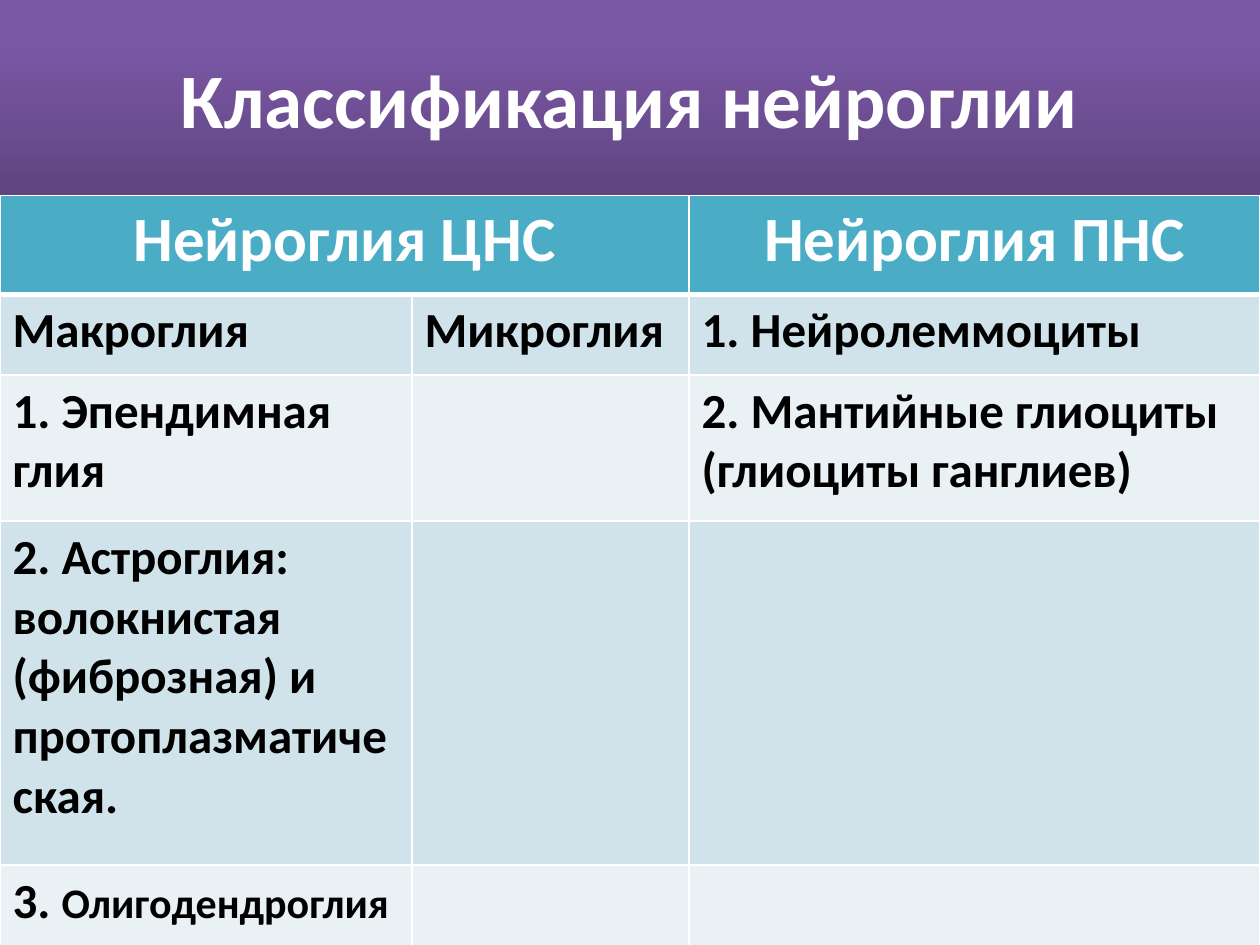
from dataclasses import dataclass

from lxml.etree import SubElement
from pptx import Presentation
from pptx.dml.color import RGBColor
from pptx.enum.text import MSO_ANCHOR, PP_ALIGN
from pptx.oxml import parse_xml
from pptx.oxml.ns import nsdecls, qn
from pptx.util import Pt


@dataclass(frozen=True)
class Theme:
    font: str = "Calibri"
    white: str = "FFFFFF"
    black: str = "000000"
    header: str = "4BACC6"
    bands: tuple = ("D0E3EA", "E9F1F5")
    gradient: tuple = ((0, "5F4480"), (80, "7B58A6"), (100, "7C57A8"))
    title_size: int = 44
    header_size: int = 36
    body_size: int = 28
    small_size: int = 24
    thin: int = 1
    thick: int = 3


@dataclass(frozen=True)
class Span:
    text: str
    size: int
    color: str


THEME = Theme()
PAGE_WIDTH, PAGE_HEIGHT = 720, 540
TITLE_HEIGHT = 111.6
COLUMN_WIDTHS = (235.4, 158.4, 326.2)
ROW_HEIGHTS = (56.8, 46, 83.5, 196.6, 46)


def heading(text: str) -> list[Span]:
    return [Span(text, THEME.header_size, THEME.white)]


def body(text: str, size: int = THEME.body_size) -> list[Span]:
    return [Span(text, size, THEME.black)]


ROWS = (
    (heading("Нейроглия ЦНС"), [], heading("Нейроглия ПНС")),
    (body("Макроглия"), body("Микроглия"), body("1. Нейролеммоциты")),
    (body("1. Эпендимная глия"), [], body("2. Мантийные глиоциты (глиоциты ганглиев)")),
    (body("2. Астроглия: волокнистая (фиброзная) и протоплазматическая."), [], []),
    (body("3. ") + body("Олигодендроглия", THEME.small_size), [], []),
)


def write_spans(para, spans: list[Span]) -> None:
    for span in spans:
        run = para.add_run()
        run.text = span.text
        run.font.name = THEME.font
        run.font.size = Pt(span.size)
        run.font.bold = True
        run.font.color.rgb = RGBColor.from_string(span.color)


def draw_title(page, text: str) -> None:
    title = page.shapes.title
    title.left, title.top = Pt(0), Pt(0)
    title.width, title.height = Pt(PAGE_WIDTH), Pt(TITLE_HEIGHT)
    title.text_frame.vertical_anchor = MSO_ANCHOR.MIDDLE
    para = title.text_frame.paragraphs[0]
    para.alignment = PP_ALIGN.CENTER
    write_spans(para, [Span(text, THEME.title_size, THEME.white)])
    stops = "".join(
        f'<a:gs pos="{position * 1000}"><a:srgbClr val="{color}"/></a:gs>'
        for position, color in THEME.gradient
    )
    properties = title.element.spPr
    properties.append(parse_xml(
        f'<a:gradFill {nsdecls("a")} rotWithShape="1"><a:gsLst>{stops}</a:gsLst>'
        '<a:lin ang="16200000" scaled="0"/></a:gradFill>'
    ))
    properties.append(parse_xml(
        f'<a:effectLst {nsdecls("a")}><a:outerShdw blurRad="{Pt(3.1)}" '
        f'dist="{Pt(1.8)}" dir="5400000" rotWithShape="0">'
        f'<a:srgbClr val="{THEME.black}"><a:alpha val="35000"/></a:srgbClr>'
        '</a:outerShdw></a:effectLst>'
    ))


def draw_borders(cell, top: int, bottom: int) -> None:
    properties = cell._tc.get_or_add_tcPr()
    widths = {"lnL": THEME.thin, "lnR": THEME.thin, "lnT": top, "lnB": bottom}
    for index, (side, width) in enumerate(widths.items()):
        line = SubElement(properties, qn(f"a:{side}"), w=str(Pt(width)))
        fill = SubElement(line, qn("a:solidFill"))
        SubElement(fill, qn("a:srgbClr"), val=THEME.white)
        properties.insert(index, line)


def draw_cell(cell, spans: list[Span], row: int) -> None:
    color = THEME.header if row == 0 else THEME.bands[(row - 1) % 2]
    cell.fill.solid()
    cell.fill.fore_color.rgb = RGBColor.from_string(color)
    para = cell.text_frame.paragraphs[0]
    para.alignment = PP_ALIGN.CENTER if row == 0 else PP_ALIGN.LEFT
    write_spans(para, spans)
    draw_borders(
        cell,
        top=THEME.thick if row == 1 else THEME.thin,
        bottom=THEME.thick if row == 0 else THEME.thin,
    )


def draw_table(page) -> None:
    table = page.shapes.add_table(
        len(ROWS), len(COLUMN_WIDTHS), Pt(0), Pt(TITLE_HEIGHT),
        Pt(PAGE_WIDTH), Pt(sum(ROW_HEIGHTS)),
    ).table
    for column, width in zip(table.columns, COLUMN_WIDTHS):
        column.width = Pt(width)
    for row, height in zip(table.rows, ROW_HEIGHTS):
        row.height = Pt(height)
    table.cell(0, 0).merge(table.cell(0, 1))
    for row, contents in enumerate(ROWS):
        for column, spans in enumerate(contents):
            draw_cell(table.cell(row, column), spans, row)


def main() -> None:
    deck = Presentation()
    deck.slide_width, deck.slide_height = Pt(PAGE_WIDTH), Pt(PAGE_HEIGHT)
    page = deck.slides.add_slide(deck.slide_layouts.get_by_name("Title Only"))
    draw_title(page, "Классификация нейроглии")
    draw_table(page)
    deck.save("out.pptx")


if __name__ == "__main__":
    main()
